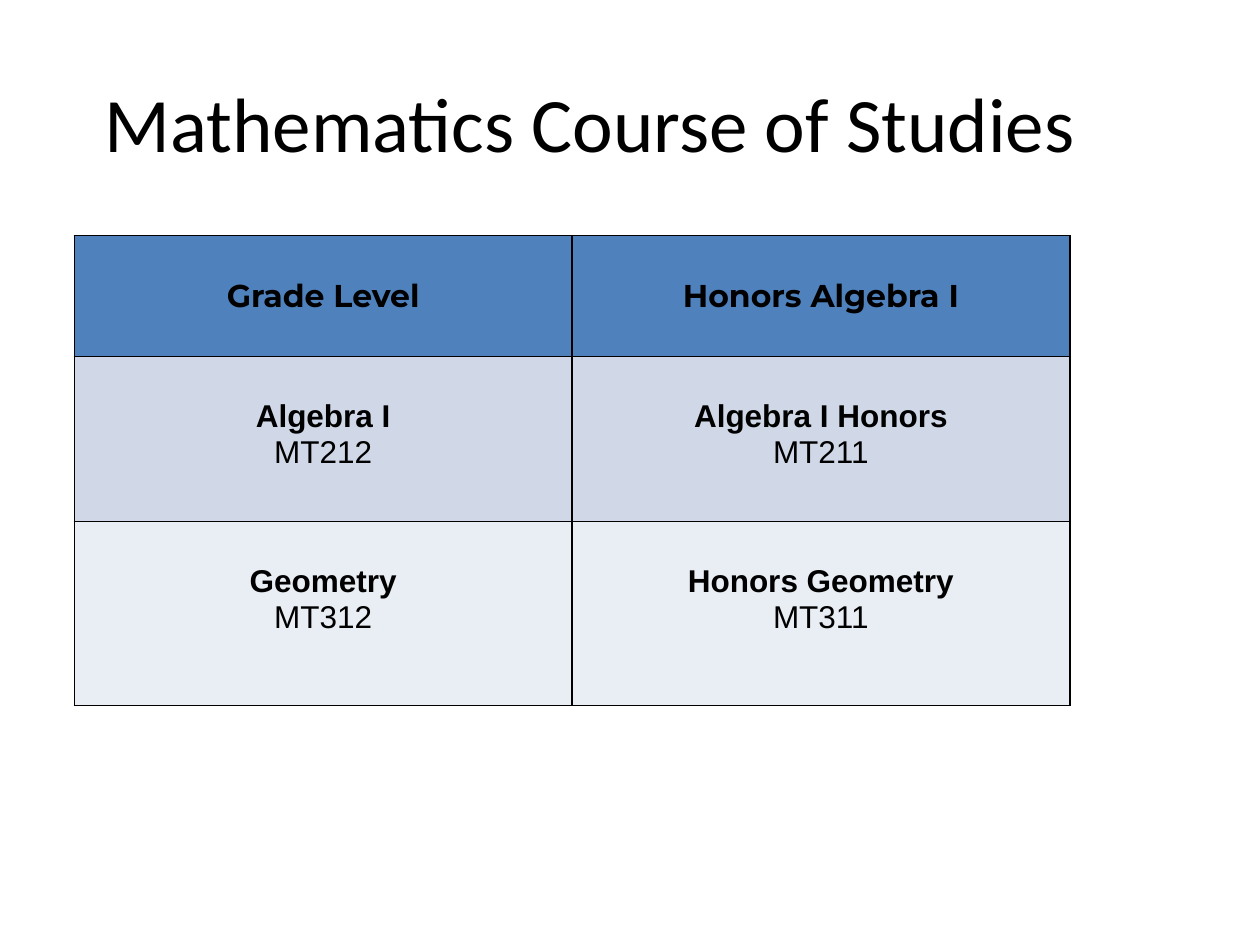
from dataclasses import dataclass

from lxml import etree
from pptx import Presentation
from pptx.dml.color import RGBColor
from pptx.enum.text import MSO_ANCHOR, PP_ALIGN
from pptx.oxml.ns import qn
from pptx.util import Inches, Pt

CENTER = PP_ALIGN.CENTER
MIDDLE = MSO_ANCHOR.MIDDLE
TOP = MSO_ANCHOR.TOP


@dataclass(frozen=True)
class Theme:
    ink: str = "000000"
    row_fills: tuple = ("4F81BD", "D0D8E8", "E9EDF4")
    title_font: str = "Calibri"
    header_font: str = "Montserrat"
    body_font: str = "Arial"
    title_size: int = 44
    table_size: int = 18
    border_width: int = 1


THEME = Theme()
COLUMN_WIDTH = 3.95
ROW_HEIGHTS = [0.96, 1.31, 1.46]
COURSE_ROWS = [
    [["Grade Level"], ["Honors Algebra I"]],
    [["Algebra I", "MT212"], ["Algebra I Honors", "MT211"]],
    [["Geometry", "MT312"], ["Honors Geometry", "MT311"]],
]


def style_paragraph(paragraph, text, font_name, size, bold=False):
    paragraph.text = text
    paragraph.alignment = CENTER
    paragraph.font.name = font_name
    paragraph.font.size = Pt(size)
    paragraph.font.bold = bold
    paragraph.font.color.rgb = RGBColor.from_string(THEME.ink)


def add_borders(cell):
    properties = cell._tc.get_or_add_tcPr()
    for position, side in enumerate(("a:lnL", "a:lnR", "a:lnT", "a:lnB")):
        line = etree.Element(qn(side), w=str(Pt(THEME.border_width)))
        fill = etree.SubElement(line, qn("a:solidFill"))
        etree.SubElement(fill, qn("a:srgbClr"), val=THEME.ink)
        properties.insert(position, line)


presentation = Presentation()
presentation.slide_width = Inches(10)
presentation.slide_height = Inches(7.5)
slide = presentation.slides.add_slide(presentation.slide_layouts[6])

title = slide.shapes.add_textbox(Inches(0.42), Inches(0.5), Inches(8.53), Inches(0.94))
title.text_frame.word_wrap = True
title.text_frame.vertical_anchor = MIDDLE
style_paragraph(title.text_frame.paragraphs[0], "Mathematics Course of Studies",
                THEME.title_font, THEME.title_size)

table = slide.shapes.add_table(
    len(COURSE_ROWS), 2, Inches(0.59), Inches(1.87),
    Inches(2 * COLUMN_WIDTH), Inches(sum(ROW_HEIGHTS)),
).table
for column in table.columns:
    column.width = Inches(COLUMN_WIDTH)

for row_index, courses in enumerate(COURSE_ROWS):
    is_header = row_index == 0
    table.rows[row_index].height = Inches(ROW_HEIGHTS[row_index])
    for column_index, lines in enumerate(courses):
        cell = table.cell(row_index, column_index)
        cell.fill.solid()
        cell.fill.fore_color.rgb = RGBColor.from_string(THEME.row_fills[row_index])
        cell.vertical_anchor = MIDDLE if is_header else TOP
        cell.margin_left = cell.margin_right = Inches(0.07)
        cell.margin_top = Inches(0.04 if is_header else 0.34)
        cell.margin_bottom = Inches(0.04)
        add_borders(cell)
        for line_index, text in enumerate(lines):
            frame = cell.text_frame
            paragraph = frame.add_paragraph() if line_index else frame.paragraphs[0]
            font_name = THEME.header_font if is_header else THEME.body_font
            style_paragraph(paragraph, text, font_name, THEME.table_size, line_index == 0)

presentation.save("out.pptx")
